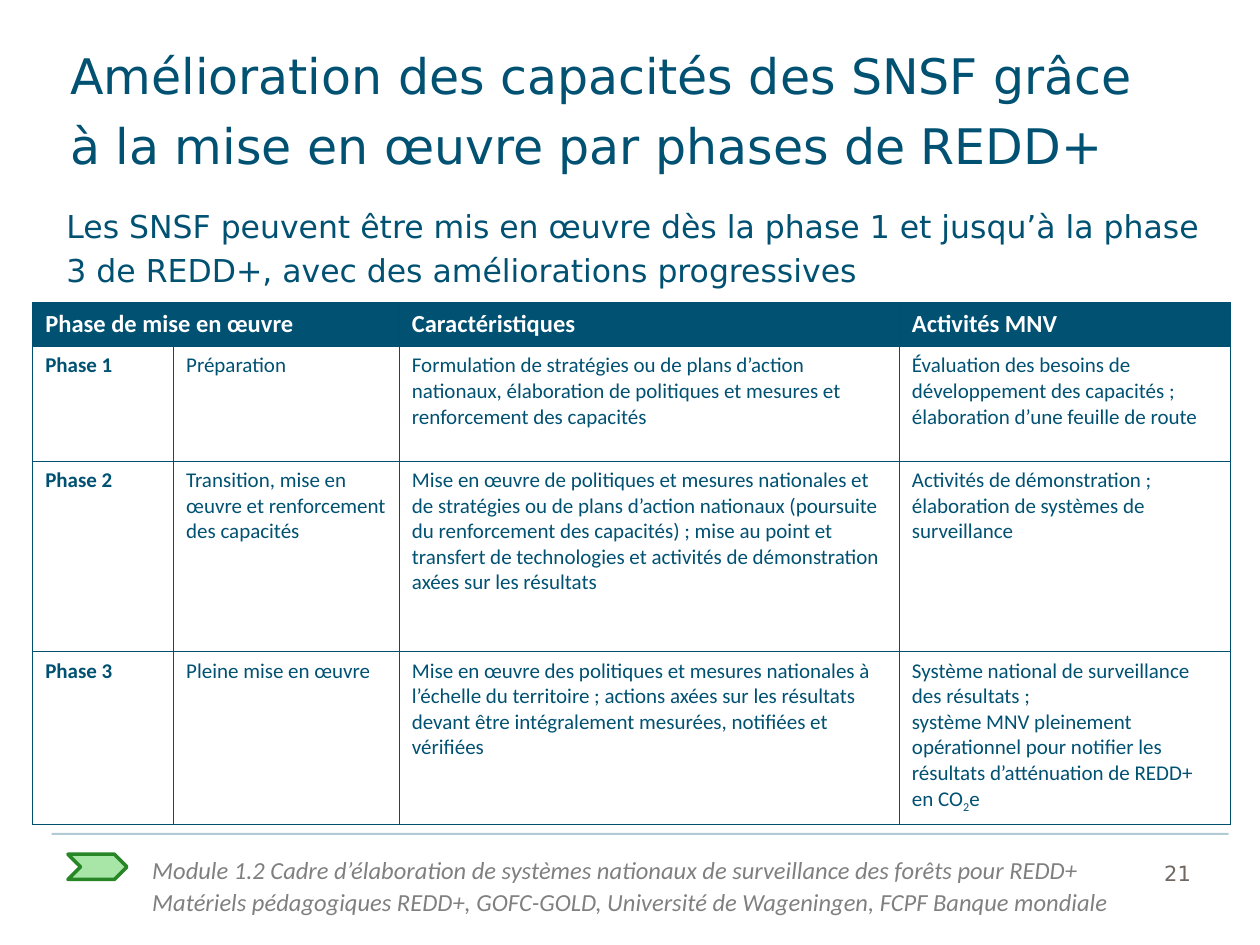
import pptx
import pptx.dml.color
import pptx.enum.shapes
import pptx.enum.text
import pptx.oxml
import pptx.oxml.ns
import pptx.util
from pptx.util import Cm

# Content
TITLE = ["Amélioration des capacités des SNSF grâce\nà la mise en œuvre par phases de REDD+"]
SUBTITLE = ["Les SNSF peuvent être mis en œuvre dès la phase 1 et jusqu’à la phase 3 de REDD+, "
            "avec des améliorations progressives"]
FOOTER = ["Module 1.2 Cadre d’élaboration de systèmes nationaux de surveillance des forêts pour REDD+",
          "Matériels pédagogiques REDD+, GOFC-GOLD, Université de Wageningen, FCPF Banque mondiale"]
PAGE_NUMBER = ["21"]
HEADER = ["Phase de mise en œuvre", "", "Caractéristiques", "Activités MNV"]
PHASES = [
    ["Phase 1", "Préparation",
     "Formulation de stratégies ou de plans d’action nationaux, élaboration de politiques "
     "et mesures et renforcement des capacités",
     "Évaluation des besoins de développement des capacités ; élaboration d’une feuille de route"],
    ["Phase 2", "Transition, mise en œuvre et renforcement des capacités",
     "Mise en œuvre de politiques et mesures nationales et de stratégies ou de plans d’action "
     "nationaux (poursuite du renforcement des capacités) ; mise au point et transfert de "
     "technologies et activités de démonstration axées sur les résultats",
     "Activités de démonstration ; élaboration de systèmes de surveillance"],
    ["Phase 3", "Pleine mise en œuvre",
     "Mise en œuvre des politiques et mesures nationales à l’échelle du territoire ; actions "
     "axées sur les résultats devant être intégralement mesurées, notifiées et vérifiées",
     ("Système national de surveillance des résultats ;\nsystème MNV pleinement opérationnel "
      "pour notifier les résultats d’atténuation de REDD+ en CO", "2", "e")],
]

# Theme: colours and type
THEME = {
    "navy": "005172", "border": "004F6F", "green": "A8E6A8", "green line": "278626",
    "title": {"name": "DejaVu Sans", "size": 28, "color": "005172"},
    "subtitle": {"name": "DejaVu Sans", "size": 18, "color": "005172"},
    "footer": {"name": "Calibri", "size": 14, "color": "808080", "italic": True},
    "number": {"name": "DejaVu Sans", "size": 12, "color": "706762"},
    "header": {"name": "Calibri", "size": 14, "color": "FFFFFF", "bold": True},
    "phase": {"name": "Calibri", "size": 12, "color": "005172", "bold": True},
    "cell": {"name": "Calibri", "size": 12, "color": "005172", "bold": False},
}

# Places in centimetres: left, top, width, height
TEXT_BOXES = [
    (TITLE, "title", (1.37, 0.69, 23.44, 3.18), 40, (0.05, 0, 0.25, 0.89)),
    (SUBTITLE, "subtitle", (1.09, 3.92, 23.67, 13.08), 25, (0.25, 0.13, 0.25, 0.13)),
    (FOOTER, "footer", (2.82, 17.07, 20.04, 1.55), 18, (0.25, 0.13, 0.25, 0.13)),
    (PAGE_NUMBER, "number", (23.22, 17.09, 1.55, 0.84), 18, (0.25, 0.13, 0.25, 0.13)),
]
CHEVRON = (1.37, 17.22, 1.19, 0.51)
RULE = (1.04, 16.81, 24.77, 16.81)
TABLE_CORNER = (0.66, 6.1)
COLUMN_WIDTHS = [2.84, 4.55, 10.08, 6.68]
ROW_HEIGHTS = [0.89, 2.31, 3.84, 3.48]


def rgb(value):
    return pptx.dml.color.RGBColor.from_string(value)


def lengths(values):
    return [Cm(value) for value in values]


def add_text(paragraph, text, style):
    """Add one run per line, with line breaks between them."""
    for index, line in enumerate(text.split("\n")):
        if index:
            paragraph.add_line_break()
        run = paragraph.add_run()
        run.text = line
        for key, value in THEME[style].items():
            if key == "color":
                run.font.color.rgb = rgb(value)
            else:
                setattr(run.font, key, pptx.util.Pt(value) if key == "size" else value)
    return run


def add_text_box(slide, lines, style, place, spacing, insets):
    frame = slide.shapes.add_textbox(*lengths(place)).text_frame
    frame.word_wrap = True
    frame.vertical_anchor = pptx.enum.text.MSO_ANCHOR.TOP
    for side, inset in zip(("left", "top", "right", "bottom"), insets):
        setattr(frame, "margin_" + side, Cm(inset))
    for index, line in enumerate(lines):
        paragraph = frame.add_paragraph() if index else frame.paragraphs[0]
        paragraph.line_spacing = pptx.util.Pt(spacing)
        add_text(paragraph, line, style)


def add_borders(cell):
    properties = cell._tc.get_or_add_tcPr()
    for position, tag in enumerate(("lnL", "lnR", "lnT", "lnB")):
        properties.insert(position, pptx.oxml.parse_xml(
            f'<a:{tag} {pptx.oxml.ns.nsdecls("a")} w="9525"><a:solidFill>'
            f'<a:srgbClr val="{THEME["border"]}"/></a:solidFill></a:{tag}>'))


def add_phase_table(slide):
    rows = [HEADER] + PHASES
    table = slide.shapes.add_table(
        len(rows), len(HEADER), *lengths(TABLE_CORNER),
        Cm(sum(COLUMN_WIDTHS)), Cm(sum(ROW_HEIGHTS))).table
    for column, width in zip(table.columns, COLUMN_WIDTHS):
        column.width = Cm(width)
    for row, height in zip(table.rows, ROW_HEIGHTS):
        row.height = Cm(height)
    table.cell(0, 0).merge(table.cell(0, 1))
    for row_index, row in enumerate(rows):
        for column_index, content in enumerate(row):
            cell = table.cell(row_index, column_index)
            if row_index == 0:
                style = "header"
                cell.fill.solid()
                cell.fill.fore_color.rgb = rgb(THEME["navy"])
            else:
                style = "cell" if column_index else "phase"
                cell.fill.background()
            add_borders(cell)
            parts = (content,) if isinstance(content, str) else content
            for index, part in enumerate(parts):
                if part:
                    run = add_text(cell.text_frame.paragraphs[0], part, style)
                    if index == 1:  # subscript
                        run.font._element.set("baseline", "-25000")


def add_footer_marks(slide):
    # Chevron
    chevron = slide.shapes.add_shape(pptx.enum.shapes.MSO_SHAPE.CHEVRON, *lengths(CHEVRON))
    chevron.shadow.inherit = False
    chevron.fill.solid()
    chevron.fill.fore_color.rgb = rgb(THEME["green"])
    chevron.line.color.rgb = rgb(THEME["green line"])
    chevron.line.width = pptx.util.Pt(2)

    # Pale rule above the footer
    rule = slide.shapes.add_connector(pptx.enum.shapes.MSO_CONNECTOR.STRAIGHT, *lengths(RULE))
    rule.line.color.rgb = rgb(THEME["navy"])
    rule.line.width = pptx.util.Pt(1.25)
    namespace = pptx.oxml.ns.nsdecls("a")
    color = rule._element.spPr.find(".//" + pptx.oxml.ns.qn("a:srgbClr"))
    color.append(pptx.oxml.parse_xml(f'<a:alpha {namespace} val="30000"/>'))
    rule._element.spPr.append(pptx.oxml.parse_xml(f"<a:effectLst {namespace}/>"))


def main():
    presentation = pptx.Presentation()
    presentation.slide_width, presentation.slide_height = Cm(25.4), Cm(19.05)
    slide = presentation.slides.add_slide(presentation.slide_layouts[6])
    add_footer_marks(slide)
    for text_box in TEXT_BOXES:
        add_text_box(slide, *text_box)
    add_phase_table(slide)
    presentation.save("out.pptx")


if __name__ == "__main__":
    main()
